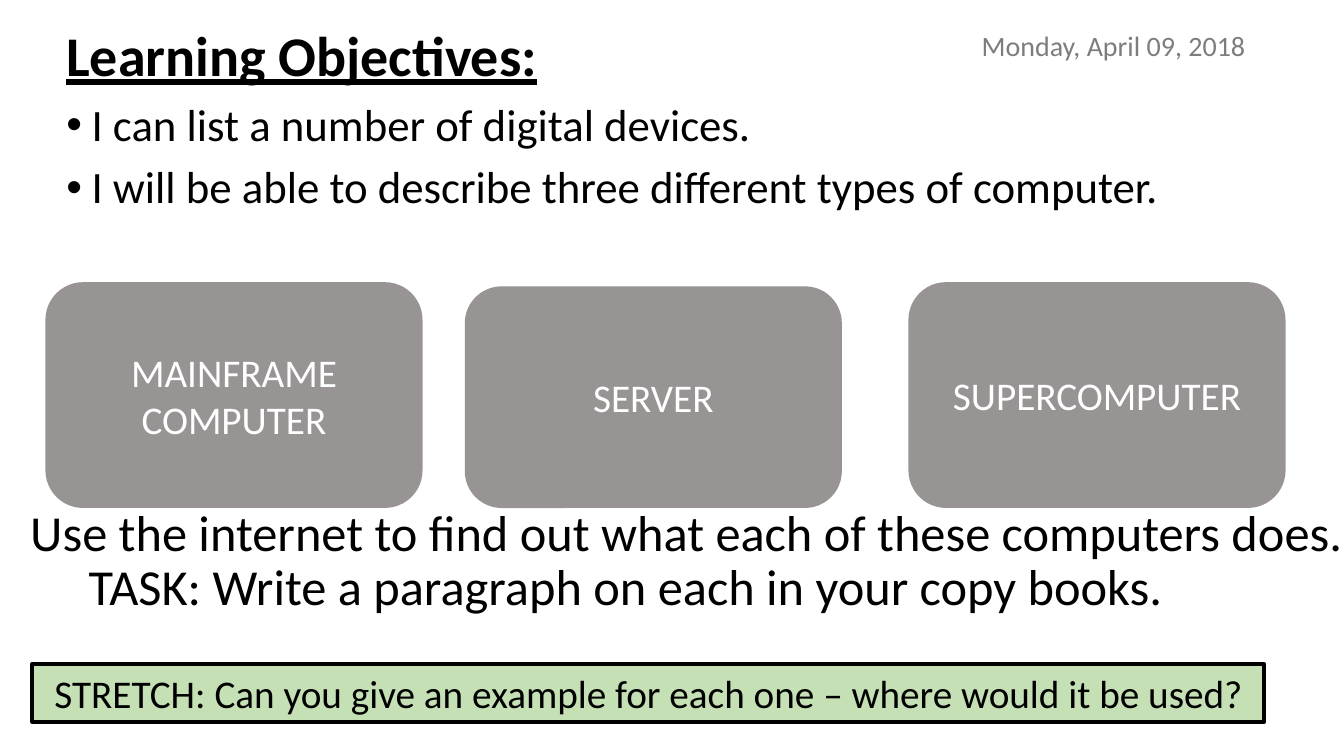
from lxml.etree import SubElement
from pptx import Presentation
from pptx.dml.color import RGBColor
from pptx.enum.shapes import MSO_SHAPE
from pptx.enum.text import MSO_ANCHOR, MSO_AUTO_SIZE, PP_ALIGN
from pptx.oxml.ns import qn
from pptx.util import Inches, Pt

WIDTH, HEIGHT = 13.33, 7.5
FONT = "Calibri"
BLACK, WHITE, GREY, GREEN = "000000", "FFFFFF", "767171", "C5E0B4"

DATE = ("Monday, April 09, 2018", (72.3, 3.33, 26.6, 5.33))
CARD_WIDTH, CARD_BOTTOM = 28.06, 67.2
CARDS = [
    ("MAINFRAME COMPUTER", 3.38, 37.33),
    ("SERVER", 34.58, 37.87),
    ("SUPERCOMPUTER", 67.59, 37.33),
]
INSTRUCTIONS = [
    ("Use the internet to find out what each of these computers does.", (1.05, 65.6, 100.08, 9.47)),
    ("TASK: Write a paragraph on each in your copy books.", (5.48, 72.8, 82.15, 9.47)),
]
STRETCH = (
    "STRETCH: Can you give an example for each one – where would it be used?",
    (2.4, 87.87, 91.67, 7.6),
)
HEADING = "Learning Objectives:"
OBJECTIVES = [
    "I can list a number of digital devices.",
    "I will be able to describe three different types of computer.",
]
OBJECTIVES_AREA = (4.2, 3.07, 92.12, 28.53)


def color(value):
    return RGBColor.from_string(value)


def place(area):
    left, top, width, height = area
    return [
        Inches(WIDTH * left / 100),
        Inches(HEIGHT * top / 100),
        Inches(WIDTH * width / 100),
        Inches(HEIGHT * height / 100),
    ]


def add_panel(kind, area, fill, opacity=100, border=None):
    panel = page.shapes.add_shape(kind, *place(area))
    panel.shadow.inherit = False
    panel.fill.solid()
    panel.fill.fore_color.rgb = color(fill)
    if opacity < 100:
        tint = panel.fill._xPr.find(qn("a:solidFill"))[0]
        SubElement(tint, qn("a:alpha"), val=str(opacity * 1000))
    if border:
        panel.line.color.rgb = color(border)
        panel.line.width = Pt(3)
    else:
        panel.line.fill.background()
    return panel


def write(box, lines, size, ink=BLACK, align=PP_ALIGN.CENTER, anchor=MSO_ANCHOR.TOP,
          wrap=True, heading=None, spacing=None, before=0, bullet=None):
    frame = box.text_frame
    frame.word_wrap = wrap
    frame.auto_size = MSO_AUTO_SIZE.NONE if wrap else MSO_AUTO_SIZE.SHAPE_TO_FIT_TEXT
    frame.vertical_anchor = anchor
    for index, line in enumerate(([heading] if heading else []) + lines):
        para = frame.add_paragraph() if index else frame.paragraphs[0]
        is_heading = bool(heading) and index == 0
        para.alignment = align
        if spacing:
            para.line_spacing = spacing
        if index:
            para.space_before = Pt(before)
        if bullet and not is_heading:
            settings = para._p.get_or_add_pPr()
            settings.set("marL", str(Inches(0.25)))
            settings.set("indent", str(-Inches(0.25)))
            SubElement(settings, qn("a:buFont"), typeface="Arial")
            SubElement(settings, qn("a:buChar"), char=bullet)
        span = para.add_run()
        span.text = line
        span.font.name = FONT
        span.font.size = Pt(40 if is_heading else size)
        span.font.bold = is_heading
        span.font.underline = is_heading
        span.font.color.rgb = color(ink)


deck = Presentation()
deck.slide_width, deck.slide_height = Inches(WIDTH), Inches(HEIGHT)
page = deck.slides.add_slide(deck.slide_layouts[6])

date, area = DATE
write(page.shapes.add_textbox(*place(area)), [date], 20,
      align=PP_ALIGN.LEFT, anchor=MSO_ANCHOR.MIDDLE)

for name, left, top in CARDS:
    card = add_panel(MSO_SHAPE.ROUNDED_RECTANGLE,
                     (left, top, CARD_WIDTH, CARD_BOTTOM - top), GREY, opacity=75)
    write(card, [name], 28, ink=WHITE, anchor=MSO_ANCHOR.MIDDLE)

for sentence, area in INSTRUCTIONS:
    write(page.shapes.add_textbox(*place(area)), [sentence], 36, wrap=False)

challenge, area = STRETCH
write(add_panel(MSO_SHAPE.RECTANGLE, area, GREEN, border=BLACK), [challenge], 28, wrap=False)

goals = add_panel(MSO_SHAPE.RECTANGLE, OBJECTIVES_AREA, WHITE, opacity=49)
write(goals, OBJECTIVES, 32, align=PP_ALIGN.LEFT, heading=HEADING,
      spacing=0.9, before=10, bullet="•")

deck.save("out.pptx")
